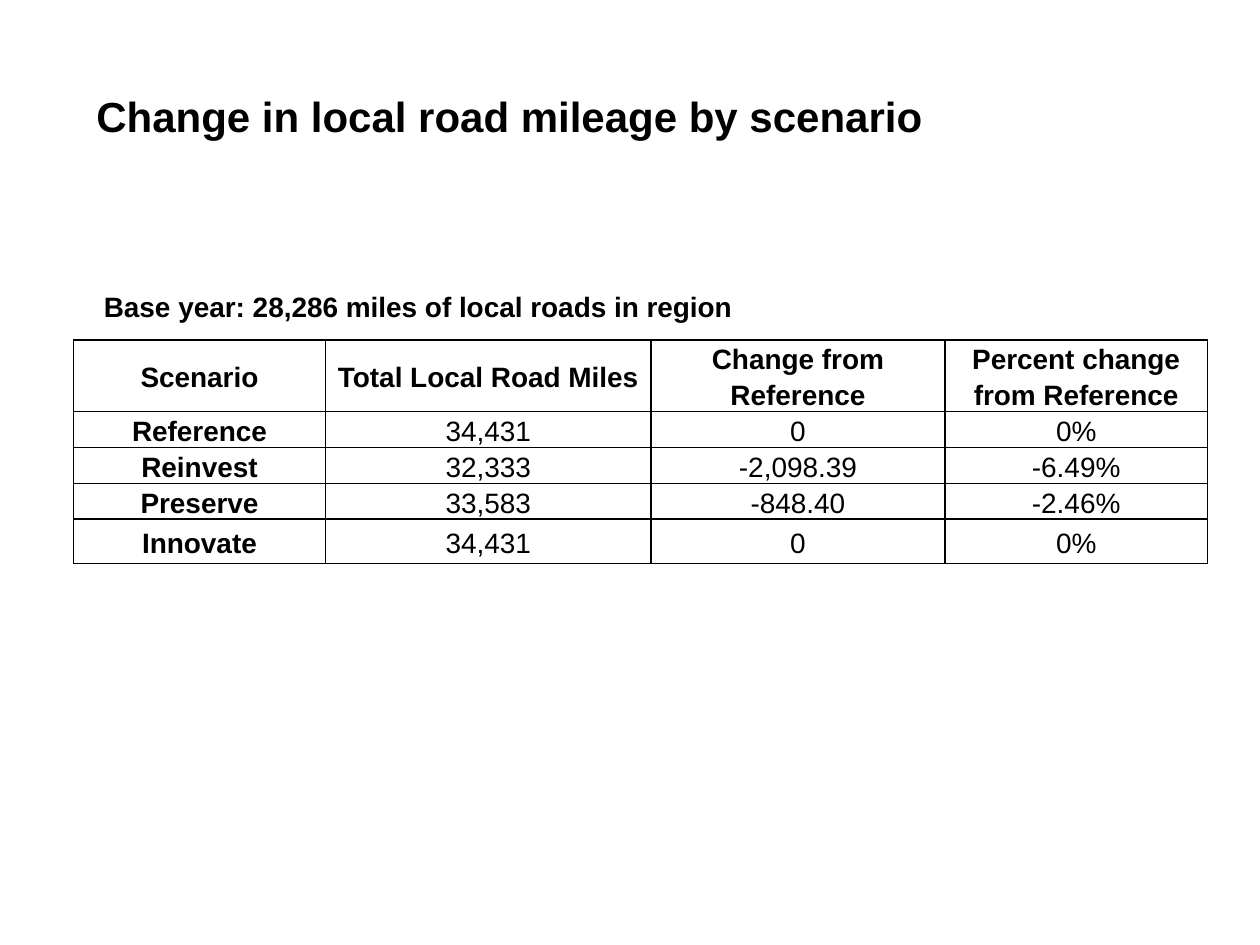
from lxml import etree
from pptx import Presentation
from pptx.dml.color import RGBColor
from pptx.enum import text
from pptx.oxml import ns
from pptx.util import Pt

BLACK = RGBColor(0, 0, 0)
FONT = "Arial"
COLUMN_WIDTHS = (144, 186, 168, 150)
ROW_HEIGHTS = (40.5, 20.5, 20.5, 20.5, 25.5)
ROWS = (
    ("Scenario", "Total Local Road Miles", "Change from Reference", "Percent change from Reference"),
    ("Reference", "34,431", "0", "0%"),
    ("Reinvest", "32,333", "-2,098.39", "-6.49%"),
    ("Preserve", "33,583", "-848.40", "-2.46%"),
    ("Innovate", "34,431", "0", "0%"),
)


def add_span(para, words, size, bold):
    """Add one black run to a paragraph."""
    span = para.add_run()
    span.text = words
    span.font.name = FONT
    span.font.size = Pt(size)
    span.font.bold = bold
    span.font.color.rgb = BLACK


def add_heading(page, left, top, width, height, words, size, align):
    """Place a bold single-line heading in the given box."""
    box = page.shapes.add_textbox(Pt(left), Pt(top), Pt(width), Pt(height))
    box.text_frame.word_wrap = False
    box.text_frame.auto_size = text.MSO_AUTO_SIZE.SHAPE_TO_FIT_TEXT
    para = box.text_frame.paragraphs[0]
    para.alignment = align
    add_span(para, words, size, True)


def add_borders(cell):
    """Draw a one-point black line on every side of a cell."""
    properties = cell._tc.get_or_add_tcPr()
    for side in ("lnL", "lnR", "lnT", "lnB"):
        line = etree.SubElement(properties, ns.qn(f"a:{side}"), w=str(Pt(1)))
        fill = etree.SubElement(line, ns.qn("a:solidFill"))
        etree.SubElement(fill, ns.qn("a:srgbClr"), val=str(BLACK))


def fill_cell(cell, words, bold):
    """Format one table cell and write its centred text."""
    add_borders(cell)
    cell.fill.background()
    cell.vertical_anchor = text.MSO_ANCHOR.MIDDLE
    cell.margin_left = cell.margin_right = Pt(6.75)
    cell.margin_top = cell.margin_bottom = 0
    para = cell.text_frame.paragraphs[0]
    para.alignment = text.PP_ALIGN.CENTER
    para.line_spacing = 1.15
    add_span(para, words, 16, bold)


def add_mileage_table(page, left, top):
    """Place the scenario table with its corner at the given point."""
    frame = page.shapes.add_table(
        len(ROWS), len(COLUMN_WIDTHS), Pt(left), Pt(top),
        Pt(sum(COLUMN_WIDTHS)), Pt(sum(ROW_HEIGHTS)))
    table = frame.table
    table.first_row = table.horz_banding = False
    for column, width in zip(table.columns, COLUMN_WIDTHS):
        column.width = Pt(width)
    for row, height in zip(table.rows, ROW_HEIGHTS):
        row.height = Pt(height)
    for i, values in enumerate(ROWS):
        for j, words in enumerate(values):
            fill_cell(table.cell(i, j), words, i == 0 or j == 0)


def main():
    """Build the slide and save the deck."""
    deck = Presentation()
    deck.slide_width, deck.slide_height = Pt(720), Pt(540)
    page = deck.slides.add_slide(deck.slide_layouts[6])
    add_mileage_table(page, 42, 194.25)
    add_heading(page, 48, 48, 491, 36, "Change in local road mileage by scenario",
                24, text.PP_ALIGN.LEFT)
    add_heading(page, 49.5, 162, 379, 26.5, "Base year: 28,286 miles of local roads in region",
                16, text.PP_ALIGN.CENTER)
    deck.save("out.pptx")


if __name__ == "__main__":
    main()
